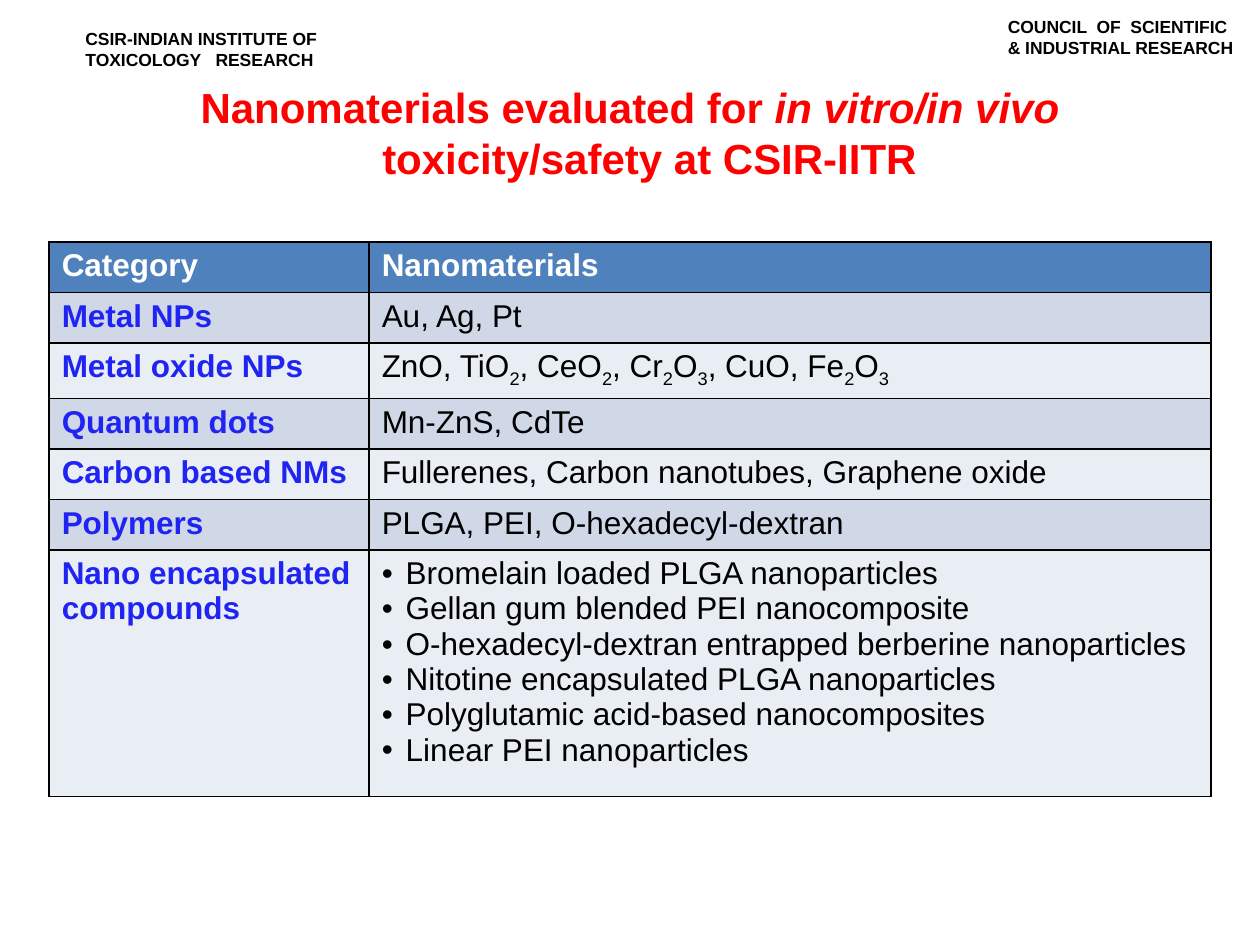
import dataclasses

import pptx
import pptx.dml.color
import pptx.enum.text
import pptx.oxml
import pptx.oxml.ns
import pptx.util

Inches = pptx.util.Inches


@dataclasses.dataclass(frozen=True)
class Theme:
    """Colours, font and type sizes of the slide."""
    font: str = "Arial"
    black: str = "000000"
    white: str = "FFFFFF"
    title: str = "FF0000"
    category: str = "1F24F2"
    header_fill: str = "4F81BD"
    odd_fill: str = "D0D8E8"
    even_fill: str = "E9EDF4"
    label_size: int = 10
    title_size: int = 24
    table_size: int = 18


THEME = Theme()
INSTITUTE = ["CSIR-INDIAN INSTITUTE OF", "TOXICOLOGY   RESEARCH"]
COUNCIL = ["COUNCIL  OF  SCIENTIFIC", "& INDUSTRIAL RESEARCH"]
TITLE = [("Nanomaterials evaluated for ", False), ("in vitro/in vivo ", True),
         ("toxicity/safety at CSIR-IITR", False)]
HEADINGS = ["Category", "Nanomaterials"]
MATERIALS = [
    ("Metal NPs", ["Au, Ag, Pt"]),
    ("Metal oxide NPs", ["ZnO, TiO_2_, CeO_2_, Cr_2_O_3_, CuO, Fe_2_O_3_"]),
    ("Quantum dots", ["Mn-ZnS, CdTe"]),
    ("Carbon based NMs", ["Fullerenes, Carbon nanotubes, Graphene oxide"]),
    ("Polymers", ["PLGA, PEI, O-hexadecyl-dextran"]),
    ("Nano encapsulated compounds", [
        "Bromelain loaded PLGA nanoparticles",
        "Gellan gum blended PEI nanocomposite",
        "O-hexadecyl-dextran entrapped berberine nanoparticles",
        "Nitotine encapsulated PLGA nanoparticles",
        "Polyglutamic acid-based nanocomposites",
        "Linear PEI nanoparticles"]),
]
COLUMN_WIDTHS = [2.54, 6.68]
ROW_HEIGHTS = [0.4, 0.4, 0.44, 0.4, 0.4, 0.4, 1.96]


def rgb(code):
    """Return the colour for a hex code."""
    return pptx.dml.color.RGBColor.from_string(code)


def xml_element(markup):
    """Parse one DrawingML element."""
    tag, rest = markup.split(" ", 1)
    return pptx.oxml.parse_xml(f"{tag} {pptx.oxml.ns.nsdecls('a')} {rest}")


def add_run(paragraph, text, size, color, bold=False, italic=False):
    """Append one formatted run and return it."""
    run = paragraph.add_run()
    run.text = text
    font = run.font
    font.name, font.size = THEME.font, pptx.util.Pt(size)
    font.bold, font.italic = bold, italic
    font.color.rgb = rgb(color)
    return run


def set_hanging(paragraph, indent):
    """Give a paragraph a hanging indent."""
    properties = paragraph._p.get_or_add_pPr()
    properties.set("marL", str(Inches(indent)))
    properties.set("indent", str(-Inches(indent)))
    return properties


def next_paragraph(frame, index):
    """Return the first paragraph of a frame or a new one."""
    return frame.add_paragraph() if index else frame.paragraphs[0]


def add_label(slide, box, lines):
    """Place an organisation name in a corner."""
    frame = slide.shapes.add_textbox(*map(Inches, box)).text_frame
    frame.word_wrap = False
    for index, line in enumerate(lines):
        add_run(next_paragraph(frame, index), line, THEME.label_size, THEME.black, bold=True)


def add_title(slide, box):
    """Place the centred title."""
    frame = slide.shapes.add_textbox(*map(Inches, box)).text_frame
    frame.word_wrap = True
    heading = frame.paragraphs[0]
    set_hanging(heading, 0.31)
    heading.alignment = pptx.enum.text.PP_ALIGN.CENTER
    for text, italic in TITLE:
        add_run(heading, text, THEME.title_size, THEME.title, bold=True, italic=italic)


def style_cell(cell, fill):
    """Fill a cell and rule its four sides."""
    cell.fill.solid()
    cell.fill.fore_color.rgb = rgb(fill)
    properties = cell._tc.get_or_add_tcPr()
    for position, side in enumerate("LRTB"):
        properties.insert(position, xml_element(
            f'<a:ln{side} w="12700"><a:solidFill><a:srgbClr val="{THEME.black}"/>'
            f'</a:solidFill></a:ln{side}>'))


def add_formula(paragraph, text):
    """Write text whose parts between underscores are subscripts."""
    for index, part in enumerate(text.split("_")):
        if part:
            run = add_run(paragraph, part, THEME.table_size, THEME.black)
            if index % 2:
                run._r.get_or_add_rPr().set("baseline", "-25000")


def fill_materials(cell, entries):
    """Write the entries of a category, bulleted when there are several."""
    for index, entry in enumerate(entries):
        paragraph = next_paragraph(cell.text_frame, index)
        if len(entries) > 1:
            properties = set_hanging(paragraph, 0.19)
            for markup in (f'<a:buClr ><a:srgbClr val="{THEME.black}"/></a:buClr>',
                           f'<a:buFont typeface="{THEME.font}"/>', '<a:buChar char="•"/>'):
                properties.append(xml_element(markup.replace("buClr >", "buClr  >")))
        add_formula(paragraph, entry)


def add_materials_table(slide, box):
    """Place the table of nanomaterials by category."""
    table = slide.shapes.add_table(
        len(ROW_HEIGHTS), len(COLUMN_WIDTHS), *map(Inches, box)).table
    for column, width in zip(table.columns, COLUMN_WIDTHS):
        column.width = Inches(width)
    for row, height in zip(table.rows, ROW_HEIGHTS):
        row.height = Inches(height)
    for column, heading in enumerate(HEADINGS):
        cell = table.cell(0, column)
        style_cell(cell, THEME.header_fill)
        add_run(cell.text_frame.paragraphs[0], heading, THEME.table_size, THEME.white, bold=True)
    for row, (category, entries) in enumerate(MATERIALS, start=1):
        name_cell, materials_cell = table.cell(row, 0), table.cell(row, 1)
        for cell in (name_cell, materials_cell):
            style_cell(cell, THEME.odd_fill if row % 2 else THEME.even_fill)
        add_run(name_cell.text_frame.paragraphs[0], category,
                THEME.table_size, THEME.category, bold=True)
        fill_materials(materials_cell, entries)


def main():
    """Build and save the slide."""
    deck = pptx.Presentation()
    deck.slide_width, deck.slide_height = Inches(10), Inches(7.5)
    slide = deck.slides.add_slide(deck.slide_layouts[6])
    add_label(slide, (0.58, 0.17, 2.06, 0.44), INSTITUTE)
    add_label(slide, (7.9, 0.08, 2.02, 0.44), COUNCIL)
    add_title(slide, (1.2, 0.6, 7.6, 0.91))
    add_materials_table(slide, (0.39, 1.92, sum(COLUMN_WIDTHS), sum(ROW_HEIGHTS)))
    deck.save("out.pptx")


if __name__ == "__main__":
    main()
